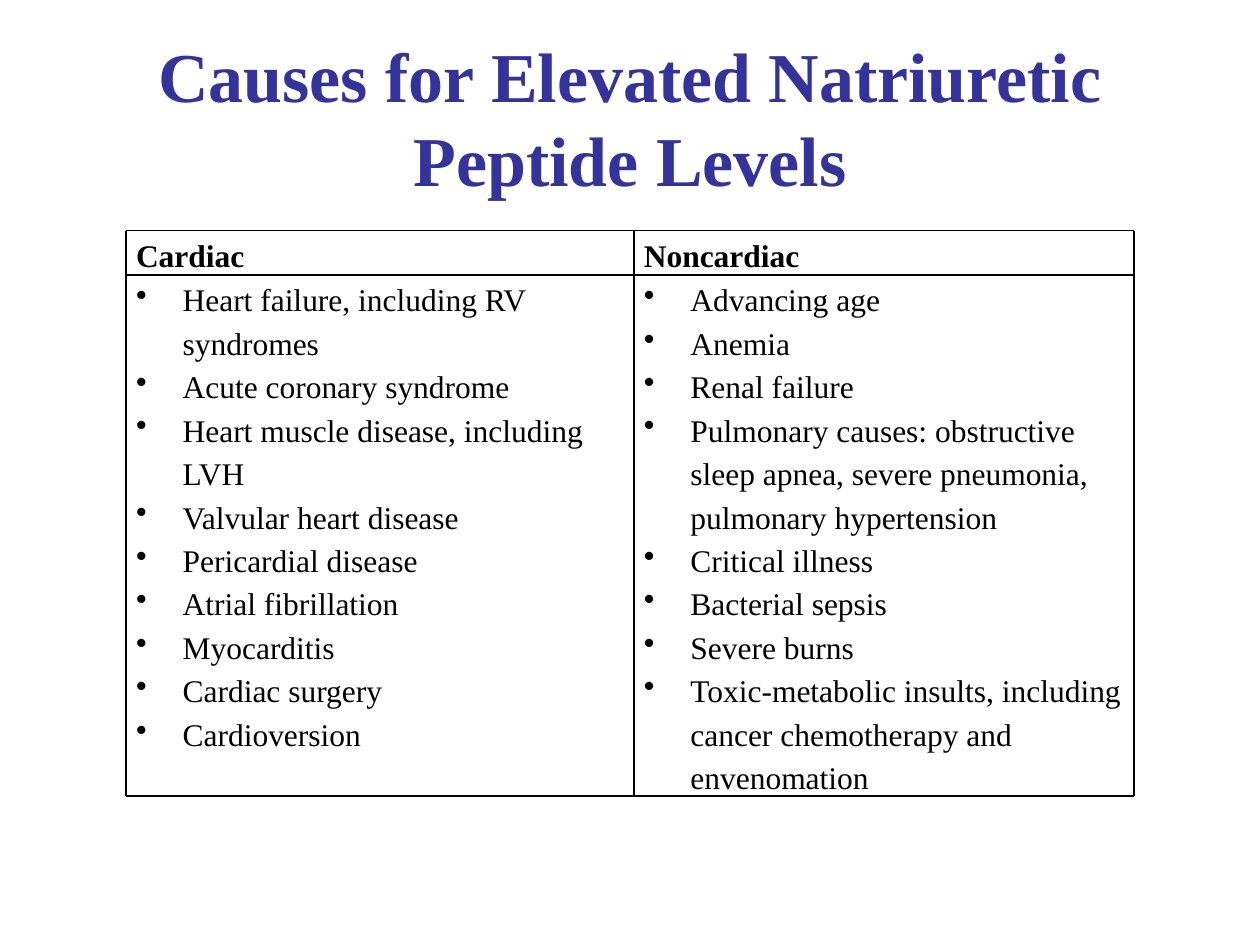
import dataclasses

import lxml.etree
import pptx
import pptx.dml.color
import pptx.enum.shapes
import pptx.enum.text
import pptx.oxml.ns
import pptx.slide
import pptx.text.text
import pptx.util


@dataclasses.dataclass(frozen=True)
class Theme:
    font: str = "Times New Roman"
    title_color: str = "333399"
    text_color: str = "000000"
    title_size: int = 40
    text_size: int = 18
    line_spacing: float = 1.15
    border_width: int = 1


@dataclasses.dataclass(frozen=True)
class Box:
    left: float
    top: float
    width: float
    height: float


@dataclasses.dataclass(frozen=True)
class CauseColumn:
    heading: str
    left: float
    right: float
    causes: tuple[str, ...]


THEME = Theme()
TITLE = "Causes for Elevated Natriuretic Peptide Levels"
TITLE_BOX = Box(0.5, 0.21, 9, 1.43)
LEFT, MIDDLE, RIGHT = 1, 5.03, 9
TOP, HEADING_BOTTOM, BOTTOM = 1.83, 2.18, 6.32
CELL_MARGIN = 0.08
BULLET_INDENT = 0.37
COLUMNS = (
    CauseColumn("Cardiac", LEFT, MIDDLE, (
        "Heart failure, including RV syndromes",
        "Acute coronary syndrome",
        "Heart muscle disease, including LVH",
        "Valvular heart disease",
        "Pericardial disease",
        "Atrial fibrillation",
        "Myocarditis",
        "Cardiac surgery",
        "Cardioversion",
    )),
    CauseColumn("Noncardiac", MIDDLE, RIGHT, (
        "Advancing age",
        "Anemia",
        "Renal failure",
        "Pulmonary causes: obstructive sleep apnea, severe pneumonia, pulmonary hypertension",
        "Critical illness",
        "Bacterial sepsis",
        "Severe burns",
        "Toxic-metabolic insults, including cancer chemotherapy and envenomation",
    )),
)


def add_element(parent: lxml.etree._Element, tag: str, **attributes: str) -> lxml.etree._Element:
    return lxml.etree.SubElement(parent, pptx.oxml.ns.qn(tag), attributes)


def style_paragraph(paragraph: pptx.text.text._Paragraph, size: int, color: str, bold: bool) -> None:
    font = paragraph.font
    font.name = THEME.font
    font.size = pptx.util.Pt(size)
    font.bold = bold
    font.color.rgb = pptx.dml.color.RGBColor.from_string(color)


def add_bullet(paragraph: pptx.text.text._Paragraph) -> None:
    properties = paragraph._p.get_or_add_pPr()
    indent = pptx.util.Inches(BULLET_INDENT)
    properties.set("marL", str(indent))
    properties.set("indent", str(-indent))
    bullet_color = add_element(properties, "a:buClr")
    add_element(bullet_color, "a:srgbClr", val=THEME.text_color)
    add_element(properties, "a:buChar", char="•")


def add_text_frame(slide: pptx.slide.Slide, box: Box, lines: tuple[str, ...]) -> pptx.text.text.TextFrame:
    shape = slide.shapes.add_textbox(
        pptx.util.Inches(box.left), pptx.util.Inches(box.top),
        pptx.util.Inches(box.width), pptx.util.Inches(box.height),
    )
    frame = shape.text_frame
    frame.word_wrap = True
    frame.text = "\n".join(lines)
    return frame


def add_title(slide: pptx.slide.Slide) -> None:
    frame = add_text_frame(slide, TITLE_BOX, (TITLE,))
    frame.vertical_anchor = pptx.enum.text.MSO_ANCHOR.MIDDLE
    paragraph = frame.paragraphs[0]
    paragraph.alignment = pptx.enum.text.PP_ALIGN.CENTER
    style_paragraph(paragraph, THEME.title_size, THEME.title_color, True)


def add_cell(slide: pptx.slide.Slide, box: Box, lines: tuple[str, ...], heading: bool) -> None:
    frame = add_text_frame(slide, box, lines)
    frame.margin_left = frame.margin_right = pptx.util.Inches(CELL_MARGIN)
    frame.margin_top = frame.margin_bottom = pptx.util.Inches(0)
    for paragraph in frame.paragraphs:
        paragraph.line_spacing = THEME.line_spacing
        if not heading:
            add_bullet(paragraph)
        style_paragraph(paragraph, THEME.text_size, THEME.text_color, heading)


def add_column(slide: pptx.slide.Slide, column: CauseColumn) -> None:
    width = column.right - column.left
    add_cell(slide, Box(column.left, TOP, width, HEADING_BOTTOM - TOP), (column.heading,), True)
    add_cell(slide, Box(column.left, HEADING_BOTTOM, width, BOTTOM - HEADING_BOTTOM), column.causes, False)


def add_rule(slide: pptx.slide.Slide, start: tuple[float, float], end: tuple[float, float]) -> None:
    connector = slide.shapes.add_connector(
        pptx.enum.shapes.MSO_CONNECTOR.STRAIGHT,
        *(pptx.util.Inches(value) for value in start + end),
    )
    connector.line.width = pptx.util.Pt(THEME.border_width)
    connector.line.color.rgb = pptx.dml.color.RGBColor.from_string(THEME.text_color)
    add_element(connector._element.spPr, "a:effectLst")


def main() -> None:
    presentation = pptx.Presentation()
    presentation.slide_width = pptx.util.Inches(10)
    presentation.slide_height = pptx.util.Inches(7.5)
    slide = presentation.slides.add_slide(presentation.slide_layouts[6])
    add_title(slide)
    for column in COLUMNS:
        add_column(slide, column)
    for horizontal in (LEFT, MIDDLE, RIGHT):
        add_rule(slide, (horizontal, TOP), (horizontal, BOTTOM))
    for vertical in (TOP, HEADING_BOTTOM, BOTTOM):
        add_rule(slide, (LEFT, vertical), (RIGHT, vertical))
    presentation.save("out.pptx")


if __name__ == "__main__":
    main()
